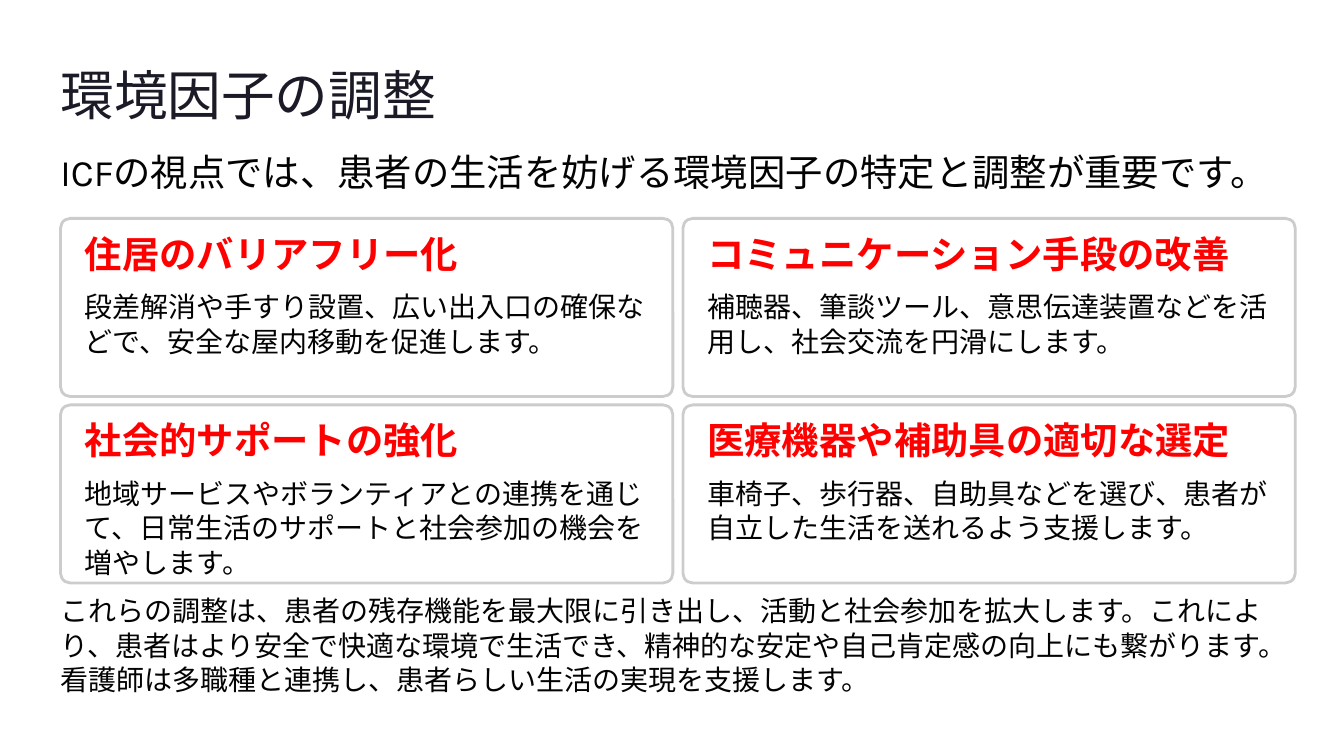
from lxml.etree import SubElement
from pptx import Presentation
from pptx.dml.color import RGBColor
from pptx.enum.lang import MSO_LANGUAGE_ID as Language
from pptx.enum.shapes import MSO_SHAPE as Shape
from pptx.oxml.ns import qn
from pptx.util import Inches, Pt

MARGIN = 0.72
CONTENT_WIDTH = 14.56
CARD_WIDTH, CARD_HEIGHT = 7.29, 2.12
CARD_TOP, CARD_PADDING = 2.6, 0.29
COLUMN_GAP, ROW_GAP = 0.12, 0.1
COLUMNS = 2

TITLE = {"name": "Inter", "size": Pt(46), "color": "1B1B27", "spacing": 57.5}
LEAD = {"name": "Karla", "size": Pt(32), "color": "030303", "spacing": 29.5}
HEADING = {"name": "Inter", "size": Pt(32), "bold": True, "color": "FF0000", "spacing": 28.5}
BODY = {"name": "Karla", "size": Pt(24), "color": "030303", "spacing": 29.5}

CARDS = [
    ("住居のバリアフリー化",
     "段差解消や手すり設置、広い出入口の確保などで、安全な屋内移動を促進します。"),
    ("コミュニケーション手段の改善",
     "補聴器、筆談ツール、意思伝達装置などを活用し、社会交流を円滑にします。"),
    ("社会的サポートの強化",
     "地域サービスやボランティアとの連携を通じて、日常生活のサポートと社会参加の機会を増やします。"),
    ("医療機器や補助具の適切な選定",
     "車椅子、歩行器、自助具などを選び、患者が自立した生活を送れるよう支援します。"),
]
CLOSING = (
    "これらの調整は、患者の残存機能を最大限に引き出し、活動と社会参加を拡大します。"
    "これにより、患者はより安全で快適な環境で生活でき、精神的な安定や自己肯定感の向上にも繋がります。"
    "看護師は多職種と連携し、患者らしい生活の実現を支援します。"
)


def color(hex_value):
    return RGBColor.from_string(hex_value)


def add_text(slide, box, text, style):
    frame = slide.shapes.add_textbox(*map(Inches, box)).text_frame
    for side in ("left", "top", "right", "bottom"):
        setattr(frame, f"margin_{side}", 0)
    frame.word_wrap = True
    paragraph = frame.paragraphs[0]
    paragraph.line_spacing = Pt(style["spacing"])
    run = paragraph.add_run()
    run.text = text
    run.font.language_id = Language.JAPANESE
    run.font.color.rgb = color(style["color"])
    for key, value in style.items():
        if key not in ("color", "spacing"):
            setattr(run.font, key, value)


def add_card(slide, left, top, heading, body):
    # Rounded frame, nearly opaque
    card = slide.shapes.add_shape(
        Shape.ROUNDED_RECTANGLE, *map(Inches, (left, top, CARD_WIDTH, CARD_HEIGHT)))
    card.adjustments[0] = 0.055
    card.shadow.inherit = False
    card.fill.solid()
    card.fill.fore_color.rgb = color("FFFFFF")
    fill_color = card.fill._xPr.find(qn("a:solidFill"))[0]
    SubElement(fill_color, qn("a:alpha"), val="95000")
    card.line.color.rgb = color("CCCCCC")
    card.line.width = Pt(2.4)

    # Heading and description
    text_left, text_top = left + CARD_PADDING, top + CARD_PADDING
    text_width = CARD_WIDTH - 2 * CARD_PADDING
    add_text(slide, (text_left, text_top, text_width, 0.43), heading, HEADING)
    add_text(slide, (text_left, text_top + 0.55, text_width, 0.89), body, BODY)


def add_cards(slide, left, top):
    for index, (heading, body) in enumerate(CARDS):
        row, column = divmod(index, COLUMNS)
        add_card(slide, left + column * (CARD_WIDTH + COLUMN_GAP),
                 top + row * (CARD_HEIGHT + ROW_GAP), heading, body)


def build_slide(presentation):
    slide = presentation.slides.add_slide(presentation.slide_layouts[6])
    # Title and lead sentence
    add_text(slide, (MARGIN, 0.71, 6.43, 0.8), "環境因子の調整", TITLE)
    add_text(slide, (MARGIN, 1.9, CONTENT_WIDTH, 0.41),
             "ICFの視点では、患者の生活を妨げる環境因子の特定と調整が重要です。", LEAD)
    # Four factors
    add_cards(slide, MARGIN, CARD_TOP)
    # Closing paragraph
    add_text(slide, (MARGIN, 7.06, CONTENT_WIDTH, 1.23), CLOSING, BODY)


def main():
    presentation = Presentation()
    presentation.slide_width = Inches(16)
    presentation.slide_height = Inches(9)
    build_slide(presentation)
    presentation.save("out.pptx")


if __name__ == "__main__":
    main()
